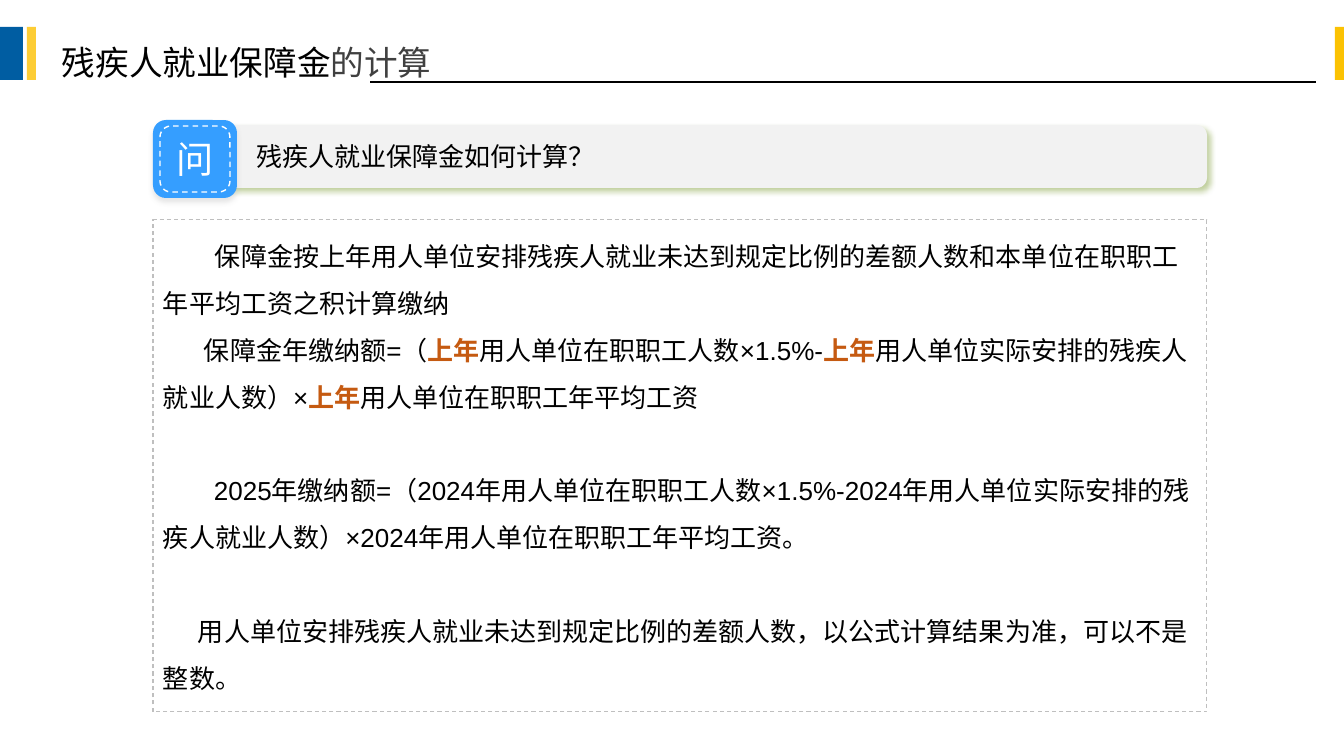
from lxml import etree
from pptx import Presentation
from pptx import util as u
from pptx.dml.color import RGBColor
from pptx.enum import dml, shapes, text
from pptx.oxml.ns import qn

BLACK = RGBColor(0x00, 0x00, 0x00)
WHITE = RGBColor(0xFF, 0xFF, 0xFF)
DARK_GRAY = RGBColor(0x40, 0x40, 0x40)
MID_GRAY = RGBColor(0xBF, 0xBF, 0xBF)
PALE_GRAY = RGBColor(0xF2, 0xF2, 0xF2)
NAVY = RGBColor(0x00, 0x5D, 0xA2)
YELLOW = RGBColor(0xFD, 0xCD, 0x35)
GOLD = RGBColor(0xFB, 0xC2, 0x03)
BLUE = RGBColor(0x35, 0x9E, 0xFF)
ORANGE = RGBColor(0xC5, 0x5A, 0x11)
OLIVE = RGBColor(0x62, 0x87, 0x0A)

# Content
TITLE = [("残疾人就业保障金", BLACK), ("的计算", DARK_GRAY)]
BADGE = "问"
QUESTION = "残疾人就业保障金如何计算？"
KEY = "上年"  # set in bold orange wherever it is a run of its own
# (first-line indent in px, starts a new block, runs)
ANSWER = [
    (52, False, ["保障金按上年用人单位安排残疾人就业未达到规定比例的差额人数和本单位在职职工年平均工资之积计算缴纳"]),
    (41, False, ["保障金年缴纳额=（", KEY, "用人单位在职职工人数×1.5%-", KEY,
                 "用人单位实际安排的残疾人就业人数）×", KEY, "用人单位在职职工年平均工资"]),
    (51, True, ["2025年缴纳额=（2024年用人单位在职职工人数×1.5%-2024年用人单位实际安排的"
                "残疾人就业人数）×2024年用人单位在职职工年平均工资。"]),
    (35, True, ["用人单位安排残疾人就业未达到规定比例的差额人数，以公式计算结果为准，可以不是整数。"]),
]
BARS = [(0, 23, NAVY), (27, 9, YELLOW), (1335, 9, GOLD)]  # left, width, fill
BLOCK_GAP = u.Pt(33.5)  # one line of answer text

PX = 914400 / 100.8


def px(n):
    return u.Emu(round(n * PX))


def add_box(s, kind, box, fill=None, line=None, width=0.75):
    sp = s.shapes.add_shape(kind, *map(px, box))
    sp.shadow.inherit = False
    if fill is None:
        sp.fill.background()
    else:
        sp.fill.solid()
        sp.fill.fore_color.rgb = fill
    if line is None:
        sp.line.fill.background()
    else:
        sp.line.color.rgb = line
        sp.line.width = u.Pt(width)
        sp.line.dash_style = dml.MSO_LINE.DASH
    return sp


def add_shadow(sp, color, angle):
    effects = sp._element.spPr.find(qn("a:effectLst"))
    shadow = etree.SubElement(effects, qn("a:outerShdw"), blurRad=str(u.Pt(4)),
                              dist=str(u.Pt(3)), dir=str(angle * 60000),
                              algn="t", rotWithShape="0")
    clr = etree.SubElement(shadow, qn("a:srgbClr"), val=str(color))
    etree.SubElement(clr, qn("a:alpha"), val="40000")


def set_frame(sp, anchor, insets):
    tf = sp.text_frame
    tf.word_wrap = True
    tf.auto_size = text.MSO_AUTO_SIZE.NONE
    tf.vertical_anchor = anchor
    tf.margin_left, tf.margin_top, tf.margin_right, tf.margin_bottom = map(px, insets)
    return tf


def style(p, size, color, align=text.PP_ALIGN.LEFT):
    p.alignment = align
    p.font.name = "Arial"
    p.font.size = u.Pt(size)
    p.font.color.rgb = color


def main():
    prs = Presentation()
    prs.slide_width, prs.slide_height = px(1344), px(756)
    s = prs.slides.add_slide(prs.slide_layouts[5])
    rect = shapes.MSO_SHAPE.RECTANGLE
    rounded = shapes.MSO_SHAPE.ROUNDED_RECTANGLE
    middle = text.MSO_ANCHOR.MIDDLE

    # Header rule and side bars
    rule = s.shapes.add_connector(shapes.MSO_CONNECTOR.STRAIGHT,
                                  px(1316), px(82), px(370), px(82))
    rule.line.color.rgb = BLACK
    rule.line.width = u.Pt(0.75)
    etree.SubElement(rule._element.spPr, qn("a:effectLst"))
    for left, width, color in BARS:
        add_box(s, rect, (left, 27, width, 53), color)

    # Title
    title = s.shapes.title
    title.left, title.top, title.width, title.height = map(px, (52, 37, 407, 51))
    p = set_frame(title, text.MSO_ANCHOR.TOP, (10, 5, 10, 5)).paragraphs[0]
    style(p, 24, BLACK)
    for words, color in TITLE:
        r = p.add_run()
        r.text = words
        r.font.color.rgb = color

    # Question bar
    bar = add_box(s, shapes.MSO_SHAPE.FLOWCHART_ALTERNATE_PROCESS,
                  (195, 125, 1012, 63), PALE_GRAY)
    add_shadow(bar, OLIVE, 45)
    p = set_frame(bar, middle, (58, 7, 13, 7)).paragraphs[0]
    p.text = QUESTION
    style(p, 18.6, BLACK)

    # Badge with dashed inner frame
    badge = add_box(s, rounded, (153, 120, 84, 78), BLUE)
    add_shadow(badge, MID_GRAY, 90)
    inner = add_box(s, rounded, (160, 126, 70, 66), line=WHITE, width=1)
    p = set_frame(inner, middle, (0, 0, 0, 0)).paragraphs[0]
    p.text = BADGE
    style(p, 26.6, WHITE, text.PP_ALIGN.CENTER)

    # Answer panel
    panel = add_box(s, rect, (153, 220, 1054, 492), line=MID_GRAY)
    tf = set_frame(panel, text.MSO_ANCHOR.TOP, (10, 5, 10, 5))
    for i, (indent, new_block, runs) in enumerate(ANSWER):
        p = tf.add_paragraph() if i else tf.paragraphs[0]
        style(p, 18.6, BLACK)
        p.line_spacing = 1.5
        if new_block:
            p.space_before = BLOCK_GAP
        p._p.get_or_add_pPr().set("indent", str(px(indent)))
        for words in runs:
            r = p.add_run()
            r.text = words
            if words == KEY:
                r.font.bold = True
                r.font.color.rgb = ORANGE

    prs.save("out.pptx")


if __name__ == "__main__":
    main()
